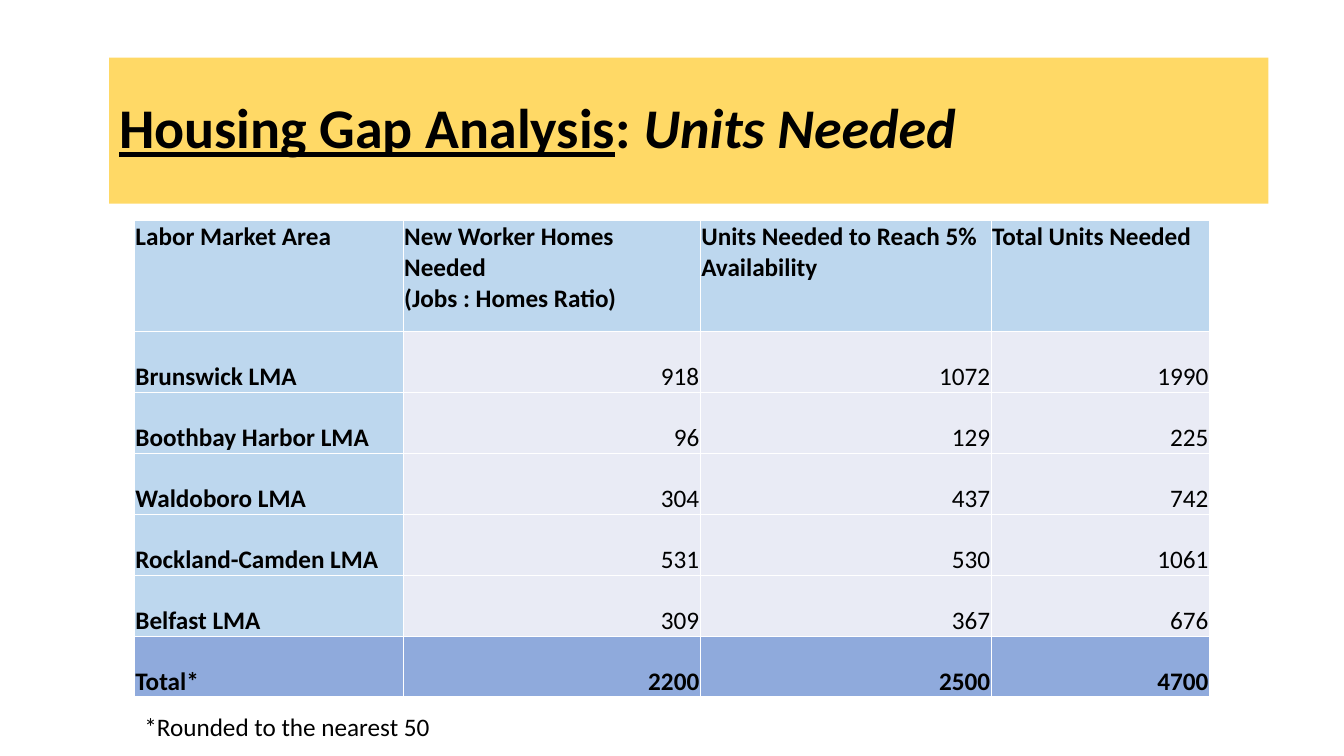
from lxml import etree
from pptx import Presentation
from pptx import util as u
from pptx.dml.color import RGBColor
from pptx.enum import shapes, text
from pptx.oxml import ns

PX = 9525  # EMU in one px, at 96 px to the inch
FONT = "Calibri"
BLACK = RGBColor(0x00, 0x00, 0x00)
GOLD = RGBColor(0xFF, 0xD9, 0x66)
SKY = RGBColor(0xBD, 0xD7, 0xEE)
PALE = RGBColor(0xE9, 0xEB, 0xF5)
BLUE = RGBColor(0x8F, 0xAA, 0xDC)
WHITE = RGBColor(0xFF, 0xFF, 0xFF)

HEADS = [
    "Labor Market Area",
    "New Worker Homes Needed\n(Jobs : Homes Ratio)",
    "Units Needed to Reach 5% Availability",
    "Total Units Needed",
]
AREAS = [
    ("Brunswick LMA", 918, 1072, 1990),
    ("Boothbay Harbor LMA", 96, 129, 225),
    ("Waldoboro LMA", 304, 437, 742),
    ("Rockland-Camden LMA", 531, 530, 1061),
    ("Belfast LMA", 309, 367, 676),
]
TOTAL = ("Total*", 2200, 2500, 4700)
COLS = [256, 283, 277, 208]
HEAD_H, ROW_H = 106, 58


def px(*sizes):
    return [u.Emu(size * PX) for size in sizes]


def write(para, words, size=18, bold=False, italic=False, line=False,
          align=text.PP_ALIGN.LEFT):
    """Add one run to a paragraph."""
    para.alignment = align
    run = para.add_run()
    run.text = words
    font = run.font
    font.name, font.size = FONT, u.Pt(size)
    font.bold, font.italic, font.underline = bold, italic, line
    font.color.rgb = BLACK


def title(slide, left, top, width, height):
    bar = slide.shapes.add_shape(shapes.MSO_SHAPE.RECTANGLE,
                                 *px(left, top, width, height))
    bar.shadow.inherit = False
    bar.fill.solid()
    bar.fill.fore_color.rgb = GOLD
    bar.line.fill.background()
    frame = bar.text_frame
    frame.word_wrap = True
    frame.vertical_anchor = text.MSO_ANCHOR.MIDDLE
    para = frame.paragraphs[0]
    para.line_spacing = 0.9
    write(para, "Housing Gap Analysis", size=40, bold=True, line=True)
    write(para, ": ", size=40, bold=True)
    write(para, "Units Needed", size=40, bold=True, italic=True)


def edge(cell):
    """Draw a thin white border on all four sides of a cell."""
    props = cell._tc.get_or_add_tcPr()
    for side in ("a:lnL", "a:lnR", "a:lnT", "a:lnB"):
        line = etree.SubElement(props, ns.qn(side), w=str(u.Pt(1)))
        fill = etree.SubElement(line, ns.qn("a:solidFill"))
        etree.SubElement(fill, ns.qn("a:srgbClr"), val=str(WHITE))


def fill_cell(cell, words, color, anchor, **style):
    edge(cell)
    cell.fill.solid()
    cell.fill.fore_color.rgb = color
    cell.vertical_anchor = anchor
    cell.margin_left, cell.margin_right, cell.margin_top = px(1, 1, 1)
    cell.margin_bottom = 0
    frame = cell.text_frame
    for i, part in enumerate(words.split("\n")):
        para = frame.add_paragraph() if i else frame.paragraphs[0]
        write(para, part, **style)


def units(slide, left, top):
    rows = [HEADS, *AREAS, TOTAL]
    highs = [HEAD_H] + [ROW_H] * (len(rows) - 1)
    grid = slide.shapes.add_table(
        len(rows), len(COLS), *px(left, top, sum(COLS), sum(highs))).table
    for col, width in zip(grid.columns, px(*COLS)):
        col.width = width
    for row, high in zip(grid.rows, px(*highs)):
        row.height = high
    for r, row in enumerate(rows):
        head, last = r == 0, r == len(rows) - 1
        anchor = text.MSO_ANCHOR.TOP if head else text.MSO_ANCHOR.BOTTOM
        for c, value in enumerate(row):
            label = head or c == 0
            color = BLUE if last else SKY if label else PALE
            align = text.PP_ALIGN.LEFT if label else text.PP_ALIGN.RIGHT
            fill_cell(grid.cell(r, c), str(value), color, anchor,
                      bold=label or last, align=align)


def note(slide, left, top, width, height):
    box = slide.shapes.add_textbox(*px(left, top, width, height))
    frame = box.text_frame
    frame.word_wrap = False
    frame.auto_size = text.MSO_AUTO_SIZE.SHAPE_TO_FIT_TEXT
    write(frame.paragraphs[0], "*Rounded to the nearest 50")


def main():
    deck = Presentation()
    deck.slide_width, deck.slide_height = px(1280, 720)
    slide = deck.slides.add_slide(deck.slide_layouts[6])
    units(slide, 128, 210)
    title(slide, 104, 55, 1104, 139)
    note(slide, 128, 673, 295, 38)
    deck.save("out.pptx")


if __name__ == "__main__":
    main()
